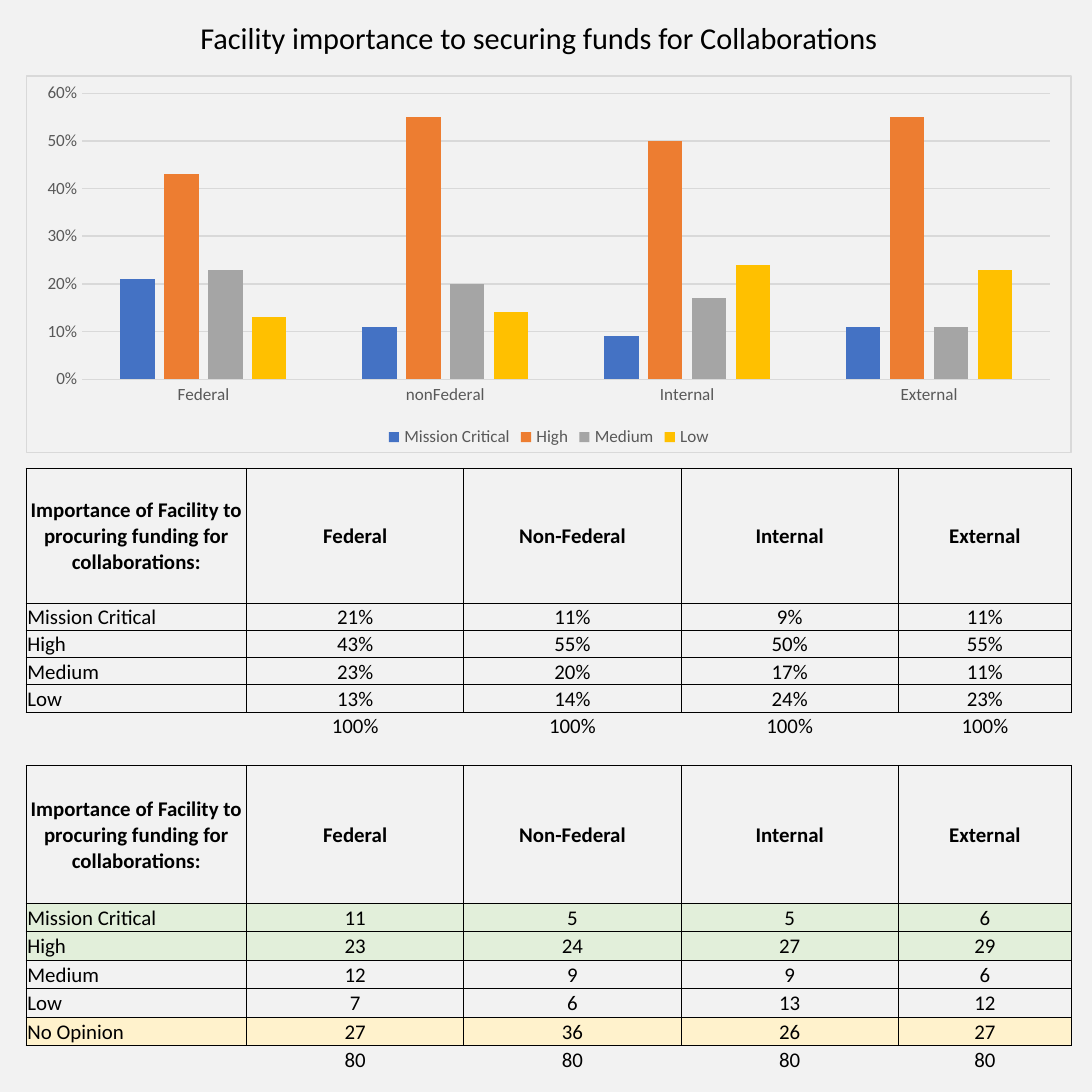
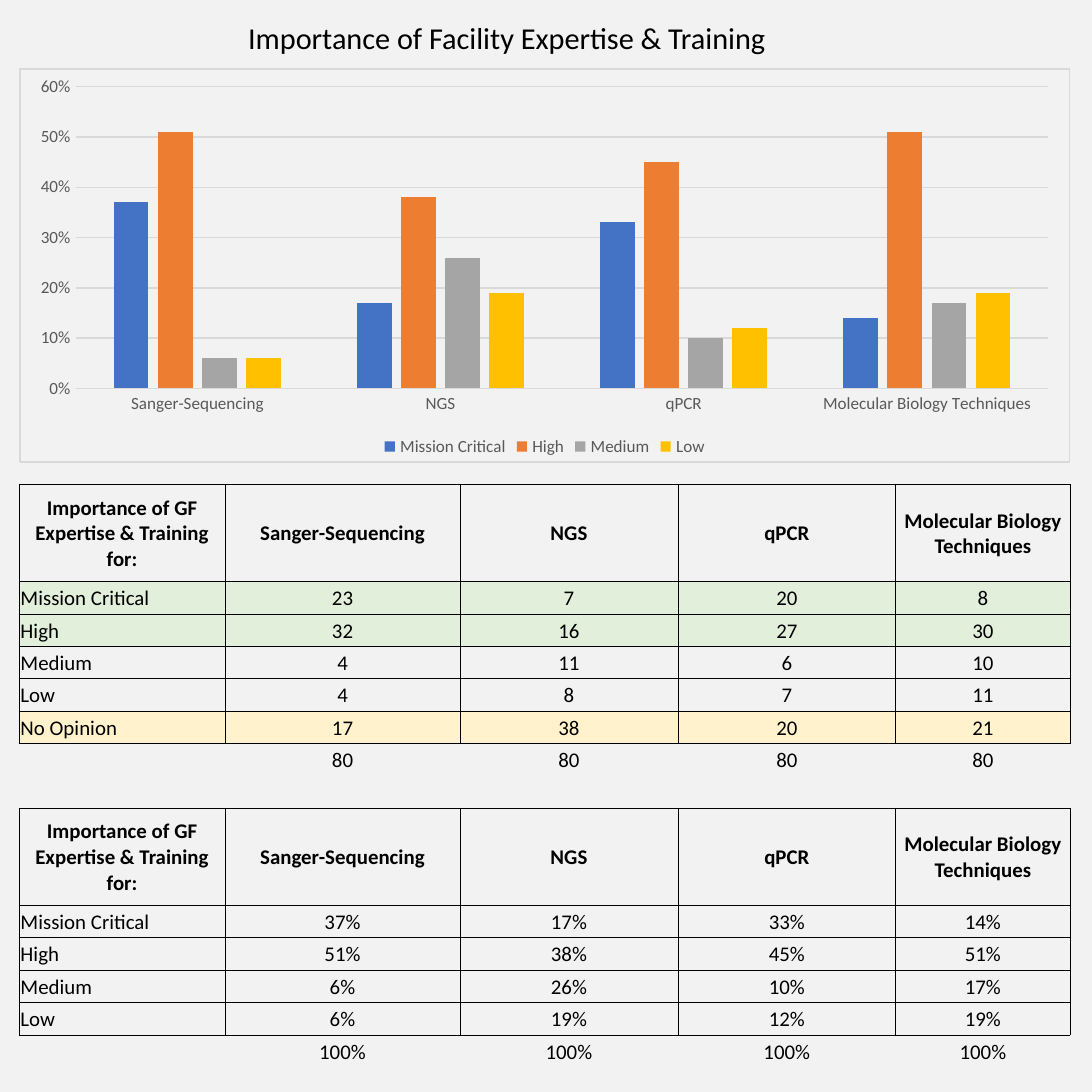
from lxml import etree
from pptx import Presentation
from pptx.chart.data import CategoryChartData
from pptx.dml.color import RGBColor
from pptx.enum.chart import XL_CHART_TYPE, XL_LEGEND_POSITION, XL_TICK_MARK
from pptx.enum.text import MSO_ANCHOR, PP_ALIGN
from pptx.oxml import parse_xml
from pptx.oxml.ns import nsdecls, qn
from pptx.util import Inches, Pt

BARS = XL_CHART_TYPE.COLUMN_CLUSTERED
BOTTOM = XL_LEGEND_POSITION.BOTTOM
NO_TICK = XL_TICK_MARK.NONE
MIDDLE = MSO_ANCHOR.MIDDLE
LEFT, CENTER = PP_ALIGN.LEFT, PP_ALIGN.CENTER

SIDE = 8  # slide width and height in inches
FONT = "Calibri"
PLAIN = "{2D5ABB26-0587-4C30-8999-92F81FD0307C}"  # table style without grid
HEX = {
    "back": "F2F2F2", "ink": "000000", "label": "595959", "rule": "D9D9D9",
    "good": "E2EFDA", "none": "FFF2CC",
    "Mission Critical": "4472C4", "High": "ED7D31",
    "Medium": "A5A5A5", "Low": "FFC000",
}
LEVELS = ["Mission Critical", "High", "Medium", "Low"]
FILLS = {"Mission Critical": "good", "High": "good", "No Opinion": "none"}
CELL = {
    "vertical_anchor": MIDDLE, "margin_left": Inches(0.01),
    "margin_right": Inches(0.01), "margin_top": Inches(0.01), "margin_bottom": 0,
}


def put(item, values):
    for name, value in values.items():
        setattr(item, name, value)


def size(share):
    """Length of a percent share of the slide's side."""
    return Inches(SIDE * share / 100)


def color(name):
    return RGBColor.from_string(HEX[name])


class Deck:
    def __init__(self):
        self.prs = Presentation()
        put(self.prs, {"slide_width": Inches(SIDE), "slide_height": Inches(SIDE)})

    def page(self):
        self.slide = self.prs.slides.add_slide(self.prs.slide_layouts[6])
        fill = self.slide.background.fill
        fill.solid()
        fill.fore_color.rgb = color("back")

    def style(self, font, points, ink="ink", bold=False):
        put(font, {"name": FONT, "size": Pt(points), "bold": bold})
        font.color.rgb = color(ink)

    def title(self, text, box):
        frame = self.slide.shapes.add_textbox(*map(size, box)).text_frame
        put(frame, {"word_wrap": True, "vertical_anchor": MIDDLE})
        para = frame.paragraphs[0]
        put(para, {"alignment": LEFT, "line_spacing": 0.9})
        run = para.add_run()
        run.text = text
        self.style(run.font, 16)

    def rule(self, line):
        line.color.rgb = color("rule")
        line.width = Pt(0.75)

    def chart(self, cats, shares, box):
        data = CategoryChartData(number_format="0%")
        data.categories = cats
        for name, row in zip(LEVELS, shares):
            data.add_series(name, row)
        chart = self.slide.shapes.add_chart(BARS, *map(size, box), data).chart
        put(chart, {"has_title": False, "has_legend": True})
        self.style(chart.font, 10)
        put(chart.legend, {"position": BOTTOM, "include_in_layout": False})
        self.style(chart.legend.font, 9, "label")

        # Bars
        plot = chart.plots[0]
        put(plot, {"gap_width": 219, "overlap": -27, "vary_by_categories": False})
        for bar in plot.series:
            bar.format.fill.solid()
            bar.format.fill.fore_color.rgb = color(bar.name)

        # Axes
        for axis in (chart.category_axis, chart.value_axis):
            put(axis, {"major_tick_mark": NO_TICK, "minor_tick_mark": NO_TICK})
            self.style(axis.tick_labels.font, 9, "label")
        self.rule(chart.category_axis.format.line)
        axis = chart.value_axis
        put(axis, {"minimum_scale": 0, "maximum_scale": 0.6, "major_unit": 0.1})
        put(axis.tick_labels, {"number_format": "0%", "number_format_is_linked": False})
        axis.format.line.fill.background()
        self.rule(axis.major_gridlines.format.line)

        # Frame
        area = parse_xml(
            f'<c:spPr {nsdecls("c", "a")}><a:noFill/><a:ln w="{Pt(0.75)}"><a:solidFill>'
            f'<a:srgbClr val="{HEX["rule"]}"/></a:solidFill></a:ln></c:spPr>')
        chart.element.find(qn("c:chart")).addnext(area)

    def edge(self, cell):
        props = cell._tc.get_or_add_tcPr()
        for side in "LRTB":
            props.append(parse_xml(
                f'<a:ln{side} {nsdecls("a")} w="{Pt(0.5)}"><a:solidFill>'
                f'<a:srgbClr val="{HEX["ink"]}"/></a:solidFill></a:ln{side}>'))

    def cell(self, cell, text, kind, fill, align):
        put(cell, CELL)
        if kind in ("head", "body"):
            self.edge(cell)
        if fill:
            cell.fill.solid()
            cell.fill.fore_color.rgb = color(fill)
        else:
            cell.fill.background()
        para = cell.text_frame.paragraphs[0]
        para.alignment = align
        if text:
            run = para.add_run()
            run.text = text
            self.style(run.font, 11, bold=kind == "head")
        else:
            etree.SubElement(para._p, qn("a:endParaRPr"), sz="1100")

    def table(self, rows, spot, cols, head, step):
        """Rows hold a kind, a fill name and the texts."""
        highs = [head if kind == "head" else step for kind, _, _ in rows]
        box = (*spot, sum(cols), sum(highs))
        shape = self.slide.shapes.add_table(len(rows), len(cols), *map(size, box))
        grid = shape.table
        put(grid, {"first_row": False, "horz_banding": False})
        shape._element.find(".//" + qn("a:tableStyleId")).text = PLAIN
        for col, wide in zip(grid.columns, cols):
            col.width = size(wide)
        for r, (kind, fill, texts) in enumerate(rows):
            grid.rows[r].height = size(highs[r])
            for c, text in enumerate(texts):
                align = LEFT if kind == "body" and c == 0 else CENTER
                self.cell(grid.cell(r, c), text, kind, fill, align)


def ratios(counts):
    """Share of each level among those with an opinion."""
    rows = [counts[level] for level in LEVELS]
    sums = [sum(col) for col in zip(*rows)]
    return [[round(n / total, 2) for n, total in zip(row, sums)] for row in rows]


def tally(head, counts):
    rows = [("body", FILLS.get(name), [name, *map(str, row)])
            for name, row in counts.items()]
    sums = [str(sum(col)) for col in zip(*counts.values())]
    return [("head", None, head), *rows, ("total", None, ["", *sums])]


def rates(head, shares):
    rows = [("body", None, [name, *(f"{n:.0%}" for n in row)])
            for name, row in zip(LEVELS, shares)]
    return [("head", None, head), *rows, ("total", None, ["", *["100%"] * 4])]


def main():
    deck = Deck()

    # Funding for collaborations
    funds = {
        "Mission Critical": [11, 5, 5, 6],
        "High": [23, 24, 27, 29],
        "Medium": [12, 9, 9, 6],
        "Low": [7, 6, 13, 12],
        "No Opinion": [27, 36, 26, 27],
    }
    head = ["Importance of Facility to procuring funding for collaborations:",
            "Federal", "Non-Federal", "Internal", "External"]
    shares = ratios(funds)
    left, cols = 2.38, [20.2, 19.9, 19.9, 19.9, 15.85]
    deck.page()
    deck.chart(["Federal", "nonFederal", "Internal", "External"], shares,
               (left, 6.88, sum(cols), 34.62))
    deck.table(tally(head, funds), (left, 70.12), cols, 12.62, 2.6)
    deck.table(rates(head, shares), (left, 42.88), cols, 12.38, 2.48)
    deck.title("Facility importance to securing funds for Collaborations",
               (17.12, 0.38, 65.75, 6.5))

    # Expertise and training
    skills = {
        "Mission Critical": [23, 7, 20, 8],
        "High": [32, 16, 27, 30],
        "Medium": [4, 11, 6, 10],
        "Low": [4, 8, 7, 11],
        "No Opinion": [17, 38, 20, 21],
    }
    head = ["Importance of GF Expertise & Training for:",
            "Sanger-Sequencing", "NGS", "qPCR", "Molecular Biology Techniques"]
    shares = ratios(skills)
    left, cols = 1.75, [18.86, 21.52, 19.96, 19.96, 15.95]
    gap = ("gap", None, [""] * len(cols))
    deck.page()
    deck.chart(head[1:], shares, (left, 6.25, sum(cols), 36.12))
    deck.table([*tally(head, skills), gap, *rates(head, shares)],
               (left, 44.38), cols, 8.88, 2.97)
    deck.title("Importance of Facility Expertise & Training",
               (21.5, 1.12, 54.38, 5.12))

    deck.prs.save("out.pptx")


if __name__ == "__main__":
    main()
